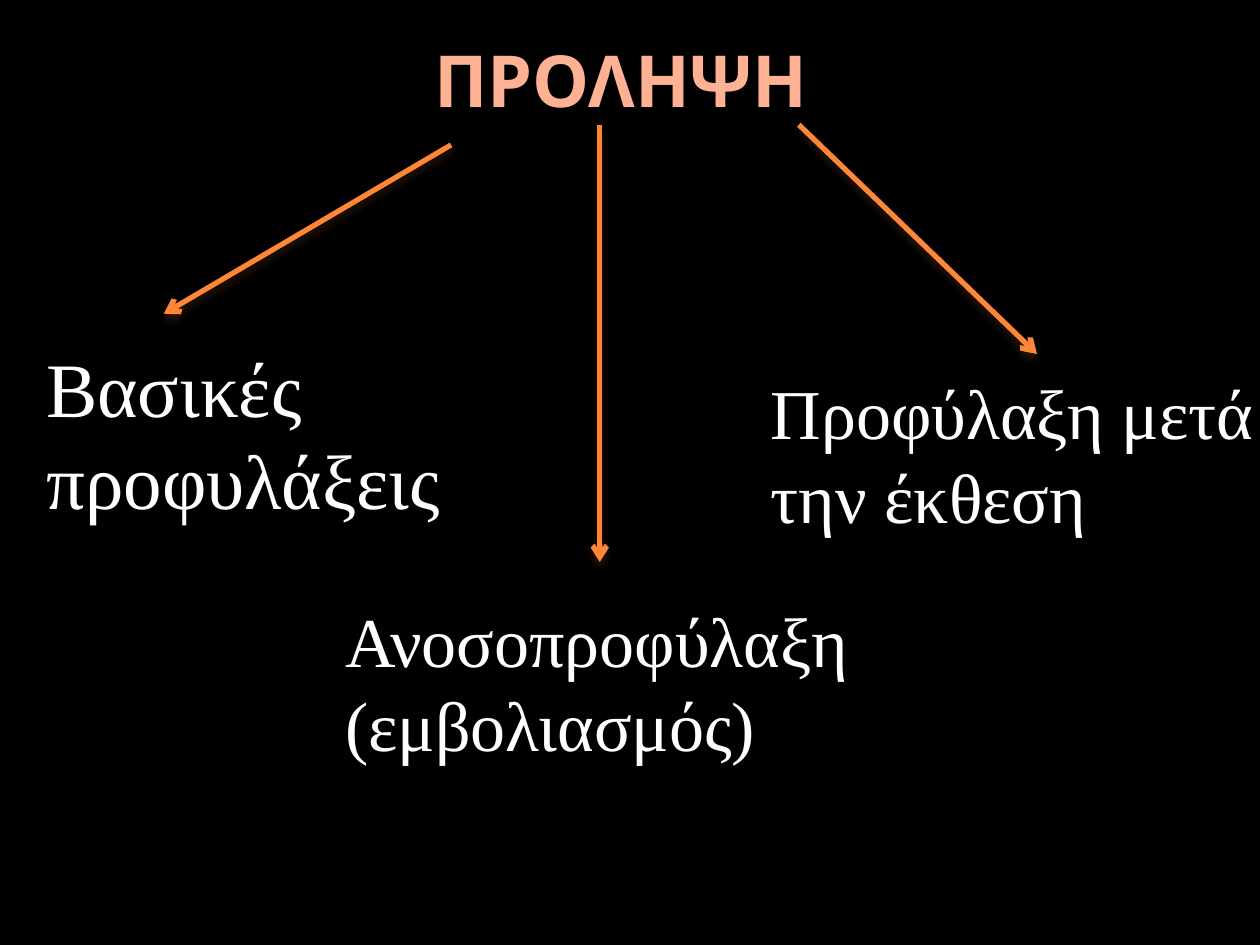
from lxml import etree
from pptx import Presentation
from pptx import util as u
from pptx.dml.color import RGBColor
from pptx.enum import shapes, text
from pptx.oxml.ns import qn

COLS, ROWS = 10, 7.5
WHITE, PEACH, ORANGE, BROWN = "FFFFFF", "FFB194", "FE8637", "5B2F12"
TITLE = ("ΠΡΟΛΗΨΗ", (0.43, 0, 9, 1.25))
BRANCHES = [
    ("Βασικές προφυλάξεις", 44, (0.27, 2.65, 3.39, 1.58), (3.58, 1.15), (1.3, 2.49)),
    ("Ανοσοπροφύλαξη (εμβολιασμός)", 40, (2.64, 4.69, 4.33, 1.45), (4.76, 0.99), (4.76, 4.46)),
    ("Προφύλαξη μετά την έκθεση", 40, (6.02, 2.88, 4.17, 2.12), (6.34, 0.99), (8.23, 2.81)),
]

prs = Presentation()
prs.slide_width, prs.slide_height = u.Inches(10), u.Inches(7.5)


def color(value):
    return RGBColor.from_string(value)


def place(*lengths):
    units = prs.slide_width / COLS, prs.slide_height / ROWS
    return [round(n * units[i % 2]) for i, n in enumerate(lengths)]


def add_text(s, box, words, size, font, fill, bold=False, centered=False):
    tf = s.shapes.add_textbox(*place(*box)).text_frame
    tf.word_wrap = True
    p = tf.paragraphs[0]
    p.text = words
    p.font.size, p.font.name, p.font.bold = u.Pt(size), font, bold
    p.font.color.rgb = color(fill)
    if centered:
        p.alignment = text.PP_ALIGN.CENTER
        tf.vertical_anchor = text.MSO_ANCHOR.MIDDLE


def add_shadow(sp):
    effects = etree.SubElement(sp._element.spPr, qn("a:effectLst"))
    shadow = etree.SubElement(effects, qn("a:outerShdw"), blurRad=str(u.Pt(4.5)),
                              dist=str(u.Pt(3)), dir="5400000", rotWithShape="0")
    shade = etree.SubElement(shadow, qn("a:srgbClr"), val=BROWN)
    etree.SubElement(shade, qn("a:alpha"), val="48000")


def add_arrow(s, start, end):
    sp = s.shapes.add_connector(shapes.MSO_CONNECTOR.STRAIGHT, *place(*start, *end))
    sp.line.color.rgb, sp.line.width = color(ORANGE), u.Pt(3)
    etree.SubElement(sp.line._get_or_add_ln(), qn("a:tailEnd"), type="arrow")
    add_shadow(sp)


def add_branch(s, words, size, box, start, end):
    add_text(s, box, words, size, "Times New Roman", WHITE)
    add_arrow(s, start, end)


def build_prevention_slide():
    s = prs.slides.add_slide(prs.slide_layouts[6])
    s.background.fill.solid()
    s.background.fill.fore_color.rgb = color("000000")
    words, box = TITLE
    add_text(s, box, words, 41, "Noto Sans", PEACH, bold=True, centered=True)
    for branch in BRANCHES:
        add_branch(s, *branch)


if __name__ == "__main__":
    build_prevention_slide()
    prs.save("out.pptx")
